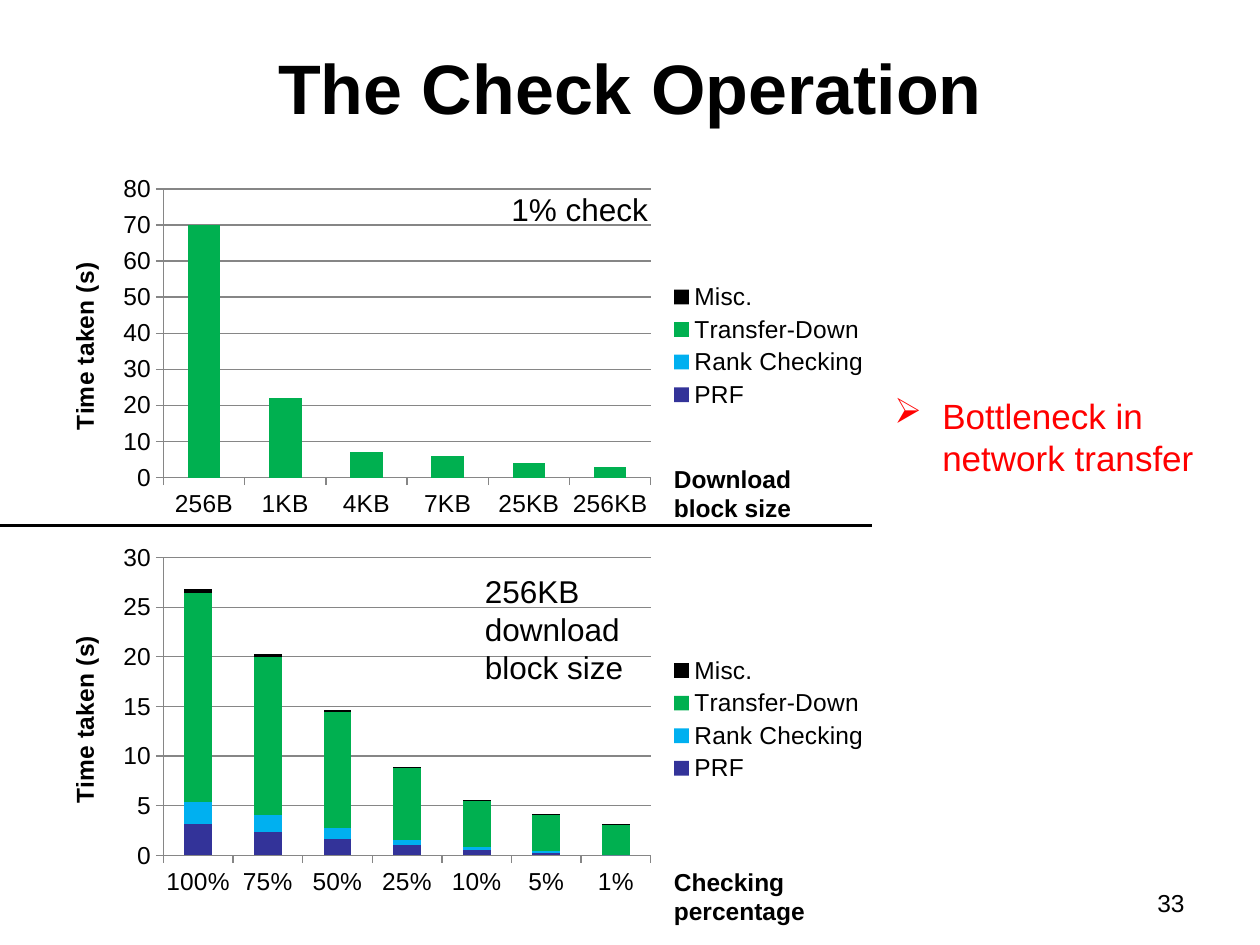
import pptx
import pptx.chart.data
import pptx.dml.color
import pptx.enum.chart
import pptx.enum.shapes
import pptx.enum.text
import pptx.oxml
import pptx.oxml.ns
import pptx.util
from dataclasses import dataclass

Inches, Pt = pptx.util.Inches, pptx.util.Pt
Align = pptx.enum.text.PP_ALIGN
Anchor = pptx.enum.text.MSO_ANCHOR


@dataclass(frozen=True)
class Theme:
    font: str = "Arial"
    ink: str = "000000"
    accent: str = "FF0000"
    grid: str = "868686"
    series: tuple = ("333399", "00B0F0", "00B050", "000000")
    title: int = 40
    body: int = 20
    note: int = 18
    small: int = 14


THEME = Theme()
WIDTH, HEIGHT = 10, 7.5

# Content
SERIES_NAMES = ("PRF", "Rank Checking", "Transfer-Down", "Misc.")
VALUE_TITLE = "Time taken (s)"
CHARTS = [
    {"top": 1.33, "height": 2.83, "maximum": 80, "step": 10,
     "categories": ("256B", "1KB", "4KB", "7KB", "25KB", "256KB"),
     "values": ((0,) * 6, (0,) * 6, (70, 22, 7, 6, 4, 3), (0,) * 6)},
    {"top": 4.25, "height": 2.92, "maximum": 30, "step": 5,
     "categories": ("100%", "75%", "50%", "25%", "10%", "5%", "1%"),
     "values": ((3.2, 2.4, 1.7, 1, 0.5, 0.2, 0),
                (2.2, 1.7, 1.1, 0.6, 0.3, 0.2, 0),
                (21, 15.9, 11.6, 7.2, 4.7, 3.7, 3.1),
                (0.4, 0.3, 0.2, 0.1, 0.1, 0.1, 0.1))},
]
CHART_LEFT, CHART_WIDTH = 0.33, 6.67
PLOT_SHARES = {"x": 0.145, "y": 0.06, "w": 0.58, "h": 0.81}
DIVIDER_Y, DIVIDER_END = 4.17, 6.92

# Text, box (left, top, width, height), size, format options
TITLE = ("The Check Operation", (0.5, 0.3, 9, 0.78), THEME.title,
         {"bold": True, "align": Align.CENTER, "anchor": Anchor.MIDDLE})
LABELS = [
    ("Download block size", (5.25, 3.63, 1.5, 0.57), THEME.small, {"bold": True}),
    ("Checking percentage", (5.25, 6.83, 1.5, 0.57), THEME.small, {"bold": True}),
    ("Bottleneck in network transfer", (7, 3.08, 2.98, 3.75), THEME.body,
     {"color": THEME.accent, "bullet": "➢"}),
    ("1% check", (3.96, 1.46, 1.29, 0.4), THEME.note, {}),
    ("256KB download block size", (3.75, 4.49, 1.47, 1.01), THEME.note, {}),
    ("33", (7.17, 7, 2.33, 0.35), THEME.small, {"align": Align.RIGHT}),
]


def rgb(value):
    return pptx.dml.color.RGBColor.from_string(value)


def style_font(font, size, color=THEME.ink, bold=False):
    font.name, font.size, font.bold = THEME.font, Pt(size), bold
    font.color.rgb = rgb(color)


def add_bullet(paragraph, character, indent=0.38):
    properties = paragraph._p.get_or_add_pPr()
    properties.set("marL", str(Inches(indent)))
    properties.set("indent", str(-Inches(indent)))
    bullet = pptx.oxml.parse_xml(
        f'<a:buChar {pptx.oxml.ns.nsdecls("a")} char="{character}"/>')
    properties.append(bullet)


def add_text(slide, text, box, size, options):
    shape = slide.shapes.add_textbox(*map(Inches, box))
    frame = shape.text_frame
    frame.word_wrap = True
    frame.vertical_anchor = options.get("anchor", Anchor.TOP)
    frame.text = text
    paragraph = frame.paragraphs[0]
    paragraph.alignment = options.get("align", Align.LEFT)
    style_font(paragraph.runs[0].font, size,
               options.get("color", THEME.ink), options.get("bold", False))
    if "bullet" in options:
        add_bullet(paragraph, options["bullet"])


def place_plot(chart):
    plot_area = chart._chartSpace.chart.plotArea
    for layout in plot_area.findall(pptx.oxml.ns.qn("c:layout")):
        plot_area.remove(layout)
    modes = "".join(f'<c:{key}Mode val="edge"/>' for key in "xy")
    shares = "".join(f'<c:{key} val="{share}"/>' for key, share in PLOT_SHARES.items())
    plot_area.insert(0, pptx.oxml.parse_xml(
        f'<c:layout {pptx.oxml.ns.nsdecls("c")}><c:manualLayout>'
        f'<c:layoutTarget val="inner"/>{modes}{shares}</c:manualLayout></c:layout>'))


def add_stacked_chart(slide, content):
    data = pptx.chart.data.CategoryChartData()
    data.categories = content["categories"]
    for name, values in zip(SERIES_NAMES, content["values"]):
        data.add_series(name, values)
    box = (CHART_LEFT, content["top"], CHART_WIDTH, content["height"])
    chart = slide.shapes.add_chart(
        pptx.enum.chart.XL_CHART_TYPE.COLUMN_STACKED, *map(Inches, box), data).chart
    style_font(chart.font, THEME.small)
    chart.has_title = False
    place_plot(chart)

    # Columns
    plot = chart.plots[0]
    plot.gap_width, plot.overlap, plot.vary_by_categories = 150, 100, False
    for series, color in zip(plot.series, THEME.series):
        series.format.fill.solid()
        series.format.fill.fore_color.rgb = rgb(color)

    # Axes and gridlines
    value_axis = chart.value_axis
    value_axis.minimum_scale, value_axis.maximum_scale = 0, content["maximum"]
    value_axis.major_unit = content["step"]
    value_axis.has_major_gridlines = True
    value_axis.axis_title.text_frame.text = VALUE_TITLE
    title_run = value_axis.axis_title.text_frame.paragraphs[0].runs[0]
    style_font(title_run.font, THEME.small, bold=True)
    for axis in (chart.category_axis, value_axis):
        axis.major_tick_mark = pptx.enum.chart.XL_TICK_MARK.OUTSIDE
    for part in (chart.category_axis, value_axis, value_axis.major_gridlines):
        part.format.line.color.rgb = rgb(THEME.grid)
        part.format.line.width = Pt(0.75)

    # Legend
    chart.has_legend = True
    chart.legend.position = pptx.enum.chart.XL_LEGEND_POSITION.RIGHT
    chart.legend.include_in_layout = False
    style_font(chart.legend.font, THEME.small)


def add_divider(slide):
    line = slide.shapes.add_connector(
        pptx.enum.shapes.MSO_CONNECTOR.STRAIGHT,
        *map(Inches, (0, DIVIDER_Y, DIVIDER_END, DIVIDER_Y)))
    line.line.color.rgb = rgb(THEME.ink)
    line.line.width = Pt(2)
    line._element.spPr.append(pptx.oxml.parse_xml(
        f'<a:effectLst {pptx.oxml.ns.nsdecls("a")}/>'))


def main():
    presentation = pptx.Presentation()
    presentation.slide_width, presentation.slide_height = Inches(WIDTH), Inches(HEIGHT)
    slide = presentation.slides.add_slide(presentation.slide_layouts[6])
    add_text(slide, *TITLE)
    for content in CHARTS:
        add_stacked_chart(slide, content)
    add_divider(slide)
    for label in LABELS:
        add_text(slide, *label)
    presentation.save("out.pptx")


if __name__ == "__main__":
    main()
